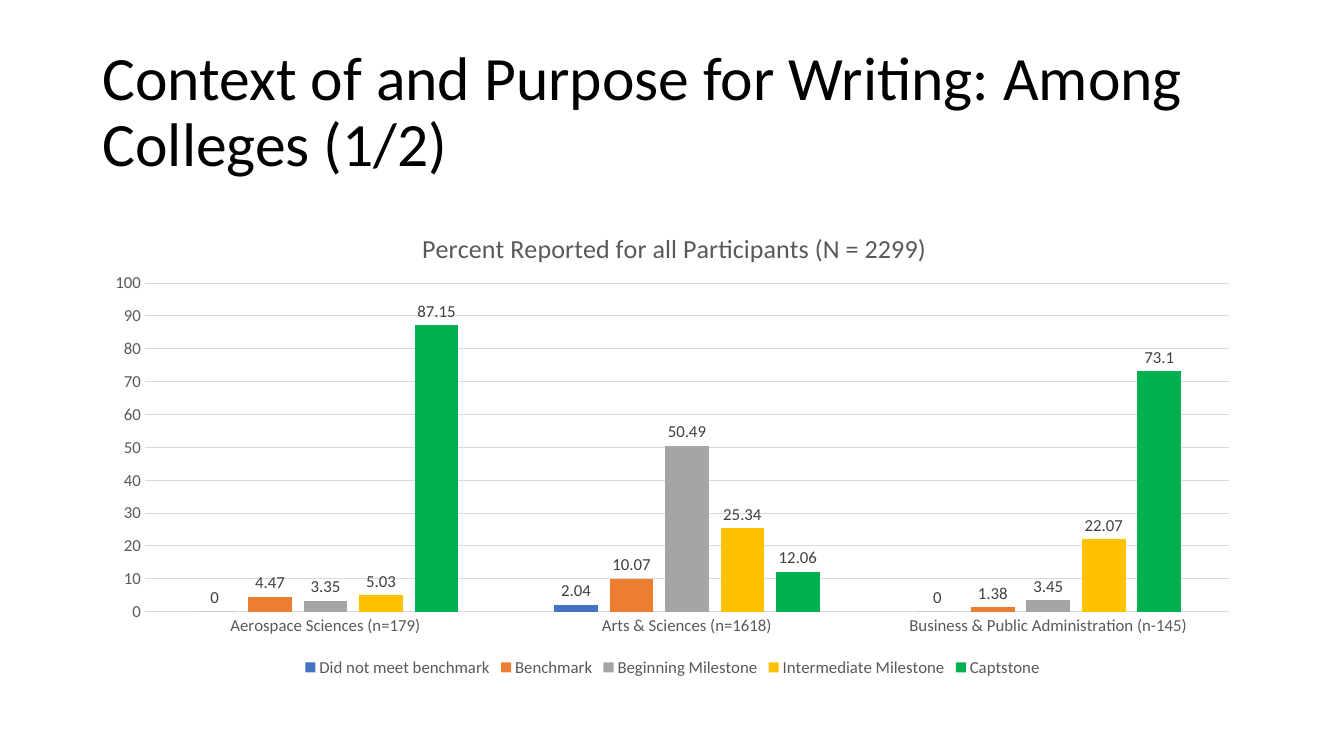
import pptx
import pptx.chart.data
import pptx.dml.color
import pptx.enum.chart
import pptx.enum.text
import pptx.oxml
import pptx.oxml.ns
import pptx.util
from pptx.util import Inches

FONT = "Calibri"
TITLE = "Context of and Purpose for Writing: Among Colleges (1/2)"
CHART_TITLE = "Percent Reported for all Participants (N = 2299)"
COLLEGES = [
    "Aerospace Sciences (n=179)",
    "Arts & Sciences (n=1618)",
    "Business & Public Administration (n-145)",
]
LEVELS = [
    ("Did not meet benchmark", "4472C4", (0, 2.04, 0)),
    ("Benchmark", "ED7D31", (4.47, 10.07, 1.38)),
    ("Beginning Milestone", "A5A5A5", (3.35, 50.49, 3.45)),
    ("Intermediate Milestone", "FFC000", (5.03, 25.34, 22.07)),
    ("Captstone", "00B050", (87.15, 12.06, 73.1)),
]


def rgb(color):
    return pptx.dml.color.RGBColor.from_string(color)


def apply(target, formats):
    for attribute, value in formats.items():
        setattr(target, attribute, value)


def style_font(font, size, color):
    apply(font, {"name": FONT, "size": pptx.util.Pt(size), "bold": False})
    font.color.rgb = rgb(color)


def style_line(line):
    line.width = pptx.util.Pt(0.75)
    line.color.rgb = rgb("D9D9D9")


def set_layout(parent, index, **fractions):
    """Place a chart part by fractions of the chart area."""
    for old in parent.findall(pptx.oxml.ns.qn("c:layout")):
        parent.remove(old)
    target = '<c:layoutTarget val="inner"/>' if "w" in fractions else ""
    modes = "".join(f'<c:{key}Mode val="edge"/>' for key in "xy")
    values = "".join(f'<c:{key} val="{value}"/>' for key, value in fractions.items())
    parent.insert(index, pptx.oxml.parse_xml(
        f'<c:layout {pptx.oxml.ns.nsdecls("c")}><c:manualLayout>'
        f"{target}{modes}{values}</c:manualLayout></c:layout>"))


def add_heading(slide, left, top, width, height):
    frame = slide.shapes.add_textbox(left, top, width, height).text_frame
    apply(frame, {
        "word_wrap": True,
        "vertical_anchor": pptx.enum.text.MSO_ANCHOR.MIDDLE,
    })
    heading = frame.paragraphs[0]
    heading.text = TITLE
    heading.line_spacing = 0.9
    style_font(heading.runs[0].font, 44, "000000")


def style_axes(chart):
    for axis in (chart.category_axis, chart.value_axis):
        apply(axis, {
            "major_tick_mark": pptx.enum.chart.XL_TICK_MARK.NONE,
            "minor_tick_mark": pptx.enum.chart.XL_TICK_MARK.NONE,
        })
        style_font(axis.tick_labels.font, 12, "595959")
    style_line(chart.category_axis.format.line)
    apply(chart.value_axis, {
        "minimum_scale": 0, "maximum_scale": 100, "major_unit": 10,
        "has_major_gridlines": True,
    })
    chart.value_axis.format.line.fill.background()
    style_line(chart.value_axis.major_gridlines.format.line)


def style_columns(plot):
    apply(plot, {"gap_width": 219, "overlap": -27, "vary_by_categories": False})
    for series, (_, color, _) in zip(plot.series, LEVELS):
        series.format.fill.solid()
        series.format.fill.fore_color.rgb = rgb(color)
        apply(series.data_labels, {
            "show_value": True,
            "position": pptx.enum.chart.XL_LABEL_POSITION.OUTSIDE_END,
        })
        style_font(series.data_labels.font, 12, "404040")


def add_benchmark_chart(slide, left, top, width, height):
    results = pptx.chart.data.CategoryChartData()
    results.categories = COLLEGES
    for name, _, percents in LEVELS:
        results.add_series(name, percents)
    chart = slide.shapes.add_chart(
        pptx.enum.chart.XL_CHART_TYPE.COLUMN_CLUSTERED,
        left, top, width, height, results).chart
    style_font(chart.font, 10, "000000")
    apply(chart, {"has_title": True, "has_legend": True})

    caption = chart.chart_title.text_frame
    caption.text = CHART_TITLE
    style_font(caption.paragraphs[0].runs[0].font, 18.6, "595959")
    chart.chart_title.include_in_layout = False
    apply(chart.legend, {
        "position": pptx.enum.chart.XL_LEGEND_POSITION.BOTTOM,
        "include_in_layout": False,
    })
    style_font(chart.legend.font, 12, "595959")

    style_axes(chart)
    style_columns(chart.plots[0])
    title_part = chart._chartSpace.chart.find(pptx.oxml.ns.qn("c:title"))
    set_layout(title_part, 1, x=0.28, y=0.05)
    set_layout(chart._chartSpace.chart.plotArea, 0, x=0.045, y=0.17, w=0.935, h=0.685)


def main():
    deck = pptx.Presentation()
    apply(deck, {"slide_width": Inches(13.33), "slide_height": Inches(7.5)})
    slide = deck.slides.add_slide(deck.slide_layouts[6])
    left, width = Inches(0.92), Inches(11.5)
    add_heading(slide, left, Inches(0.4), width, Inches(1.45))
    add_benchmark_chart(slide, left, Inches(2), width, Inches(4.76))
    deck.save("out.pptx")


if __name__ == "__main__":
    main()
